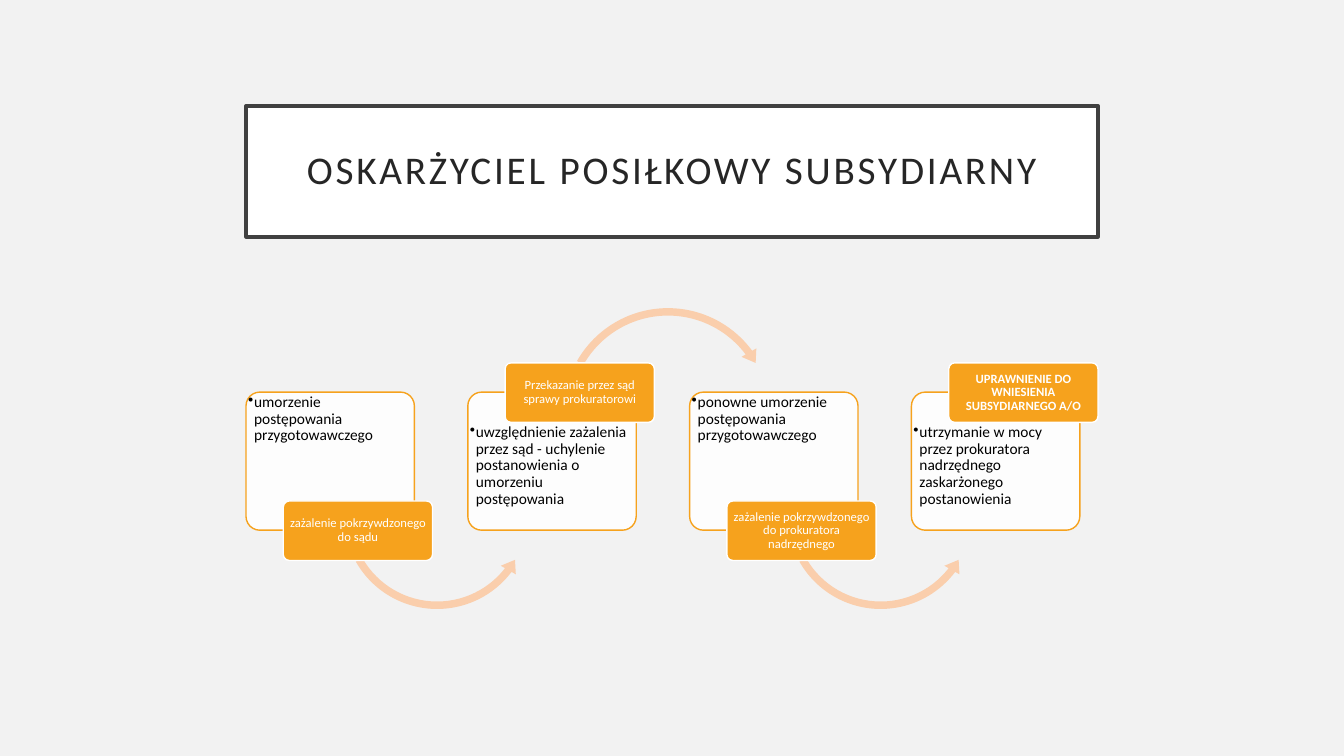
"""Build a slide showing the four steps towards a subsidiary prosecutor."""
from lxml.etree import SubElement
from pptx import Presentation
from pptx.dml.color import RGBColor
from pptx.enum.shapes import MSO_SHAPE
from pptx.enum.text import MSO_ANCHOR, PP_ALIGN
from pptx.oxml.ns import qn
from pptx.util import Inches, Pt

STEPS = [
    ("umorzenie postępowania przygotowawczego",
     "zażalenie pokrzywdzonego do sądu"),
    ("uwzględnienie zażalenia przez sąd - uchylenie postanowienia o umorzeniu postępowania",
     "Przekazanie przez sąd sprawy prokuratorowi"),
    ("ponowne umorzenie postępowania przygotowawczego",
     "zażalenie pokrzywdzonego do prokuratora nadrzędnego"),
    ("utrzymanie w mocy przez prokuratora nadrzędnego zaskarżonego postanowienia",
     "UPRAWNIENIE DO WNIESIENIA SUBSYDIARNEGO A/O"),
]
LEFT, PITCH, BODY_TOP = 2.44, 2.2, 3.89
LOWER_ARROW = (MSO_SHAPE.LEFT_CIRCULAR_ARROW, 0.92, 4.14, 1.95,
               (0.038, 4.685, 22.44, 90.245, 0.044))
UPPER_ARROW = (MSO_SHAPE.CIRCULAR_ARROW, 0.9, 3.01, 2.17,
               (0.034, 4.188, 194.057, 125.755, 0.039))


def color(value):
    return RGBColor.from_string(value)


class ProcessSlide:
    font = "Calibri"
    accent = "F6A21D"
    arrow_color = "FACEAC"
    white = "FFFFFF"

    def __init__(self, page):
        self.page = page
        page.background.fill.solid()
        page.background.fill.fore_color.rgb = color("F2F2F2")

    def shape(self, kind, left, top, width, height, fill, line=None,
              line_width=1, adjustments=()):
        box = self.page.shapes.add_shape(
            kind, Inches(left), Inches(top), Inches(width), Inches(height))
        box.shadow.inherit = False
        box.fill.solid()
        box.fill.fore_color.rgb = color(fill)
        if line:
            box.line.color.rgb = color(line)
            box.line.width = Pt(line_width)
        else:
            box.line.fill.background()
        for index, value in enumerate(adjustments):
            box.adjustments[index] = value
        return box

    def text(self, box, wording, size, text_color, margin,
             anchor=MSO_ANCHOR.MIDDLE, align=PP_ALIGN.CENTER, bold=False):
        frame = box.text_frame
        frame_format = {"word_wrap": True, "vertical_anchor": anchor}
        for side in ("left", "top", "right", "bottom"):
            frame_format[f"margin_{side}"] = Inches(margin)
        for name, value in frame_format.items():
            setattr(frame, name, value)
        para = frame.paragraphs[0]
        para.alignment = align
        para.line_spacing = 0.9
        span = para.add_run()
        span.text = wording
        for name, value in {"name": self.font, "size": Pt(size), "bold": bold}.items():
            setattr(span.font, name, value)
        span.font.color.rgb = color(text_color)
        return para

    def title(self, wording):
        box = self.shape(MSO_SHAPE.RECTANGLE, LEFT, 1.05, 8.45, 1.3,
                         self.white, "404040", 2.5)
        para = self.text(box, wording, 28, "262626", 0.2)
        para.runs[0]._r.get_or_add_rPr().set("spc", "200")

    def panel(self, left):
        box = self.shape(MSO_SHAPE.ROUNDED_RECTANGLE, left, BODY_TOP, 1.67, 1.37,
                         self.white, self.accent, adjustments=(0.1,))
        tint = box._element.spPr.find(qn("a:solidFill"))[0]
        SubElement(tint, qn("a:alpha"), val="90000")

    def bullet(self, left, top, wording):
        box = self.page.shapes.add_textbox(
            Inches(left), Inches(top), Inches(1.67), Inches(1.08))
        para = self.text(box, wording, 11, "000000", 0.02,
                         MSO_ANCHOR.TOP, PP_ALIGN.LEFT)
        properties = para._p.get_or_add_pPr()
        properties.set("marL", str(Inches(0.06)))
        properties.set("indent", str(-Inches(0.06)))
        SubElement(properties, qn("a:buChar"), char="•")

    def arrow(self, left, kind, offset, top, size, adjustments):
        self.shape(kind, left + offset, top, size, size,
                   self.arrow_color, adjustments=adjustments)

    def label(self, left, top, wording, bold):
        box = self.shape(MSO_SHAPE.ROUNDED_RECTANGLE, left, top, 1.48, 0.59,
                         self.accent, self.white, adjustments=(0.1,))
        self.text(box, wording, 9, self.white, 0, bold=bold)


def main():
    deck = Presentation()
    deck.slide_width, deck.slide_height = Inches(13.33), Inches(7.5)
    slide = ProcessSlide(deck.slides.add_slide(deck.slide_layouts[6]))
    slide.title("OSKARŻYCIEL POSIŁKOWY SUBSYDIARNY")
    for index, (event, action) in enumerate(STEPS):
        left = LEFT + index * PITCH
        label_above = index % 2 == 1
        last = index == len(STEPS) - 1
        slide.panel(left)
        slide.bullet(left, BODY_TOP + 0.3 * label_above, event)
        if not last:
            slide.arrow(left, *(UPPER_ARROW if label_above else LOWER_ARROW))
        slide.label(left + 0.37, 3.6 if label_above else 4.97, action, last)
    deck.save("out.pptx")


if __name__ == "__main__":
    main()
